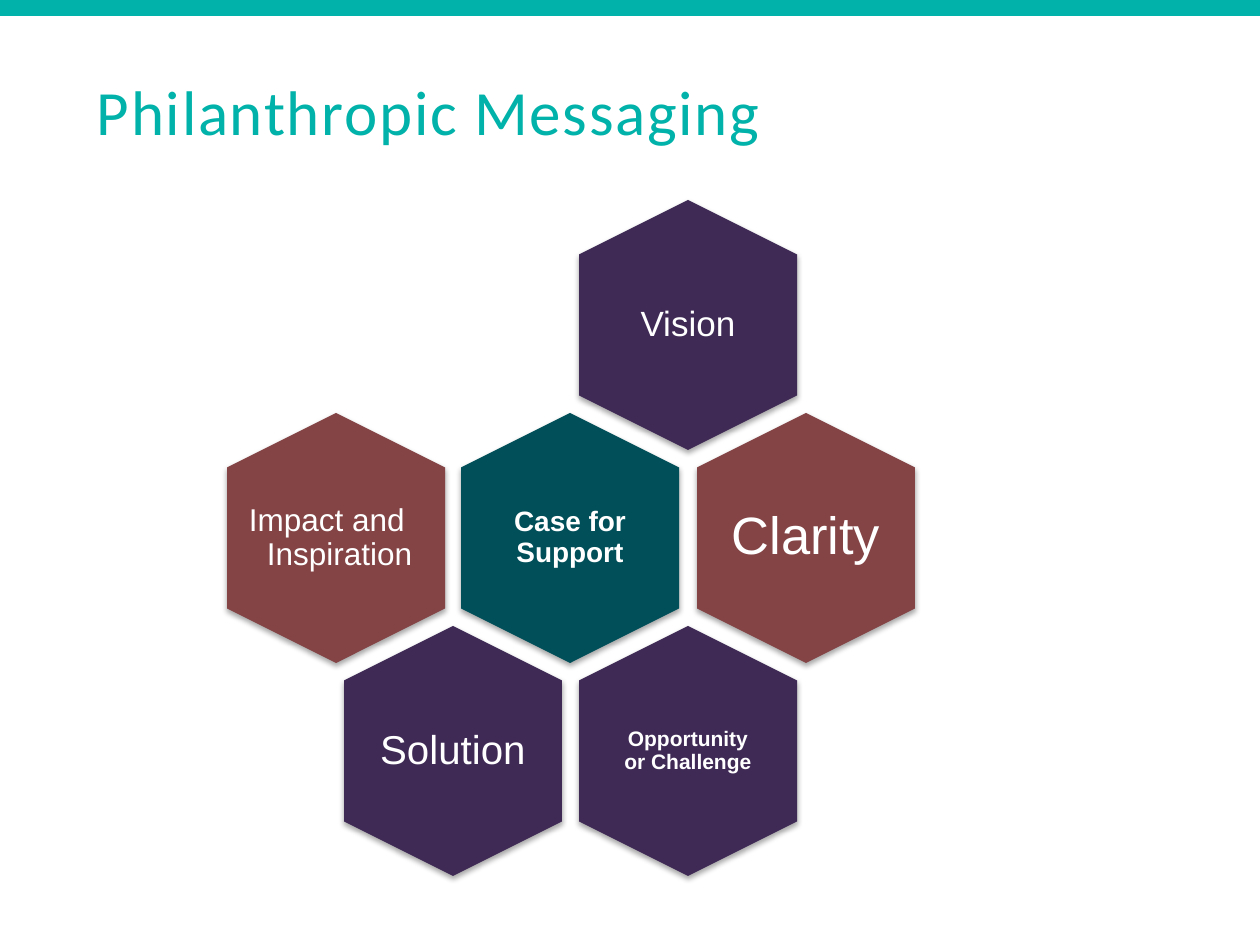
import lxml.etree
import pptx
import pptx.dml.color
import pptx.enum.shapes
import pptx.enum.text
import pptx.oxml.ns
import pptx.util

EMU_PER_PX = 914400 / 126
COLORS = {
    "teal": "00B2A9",
    "deep teal": "004F59",
    "purple": "3F2A56",
    "red": "844345",
    "white": "FFFFFF",
    "shadow": "000000",
}
HEX_LENGTH, HEX_BREADTH = 250, 218
LABEL_WIDTH, LABEL_HEIGHT = 150, 172
COLUMN_CENTERS = [336, 453, 570, 688, 806]
FIRST_ROW_CENTER, ROW_STEP = 325, 213

# text, column, row, fill, font size, bold, inset
CELLS = [
    ("Vision", 3, 0, "purple", 20, False, 10),
    ("Case for Support", 2, 1, "deep teal", 16, True, 9),
    ("Clarity", 4, 1, "red", 30, False, 0),
    ("Opportunity or Challenge", 3, 2, "purple", 12, True, 6),
    ("Solution", 1, 2, "purple", 23, False, 0),
]


def px(length):
    return pptx.util.Emu(round(length * EMU_PER_PX))


def color(name):
    return pptx.dml.color.RGBColor.from_string(COLORS[name])


def add_filled_shape(page, kind, left, top, width, height, fill):
    shape = page.shapes.add_shape(kind, px(left), px(top), px(width), px(height))
    shape.shadow.inherit = False
    shape.fill.solid()
    shape.fill.fore_color.rgb = color(fill)
    shape.line.fill.background()
    return shape


def add_soft_shadow(shape):
    """Put a blurred shadow straight below the shape."""
    qn = pptx.oxml.ns.qn
    effects = shape._element.spPr.find(qn("a:effectLst"))
    shadow = lxml.etree.SubElement(
        effects, qn("a:outerShdw"), blurRad="40000", dist="23000",
        dir="5400000", rotWithShape="0")
    tint = lxml.etree.SubElement(shadow, qn("a:srgbClr"), val=COLORS["shadow"])
    lxml.etree.SubElement(tint, qn("a:alpha"), val="35000")


def add_hexagon(page, center_x, center_y, fill):
    """Add a hexagon standing on its point."""
    hexagon = add_filled_shape(
        page, pptx.enum.shapes.MSO_SHAPE.HEXAGON,
        center_x - HEX_LENGTH / 2, center_y - HEX_BREADTH / 2,
        HEX_LENGTH, HEX_BREADTH, fill)
    hexagon.adjustments[0] = 0.25
    hexagon.rotation = 90
    add_soft_shadow(hexagon)


def add_text(page, text, left, top, width, height, size, font, tint, inset=0):
    """Add a one-paragraph text box and return its frame and paragraph."""
    box = page.shapes.add_textbox(px(left), px(top), px(width), px(height))
    frame = box.text_frame
    frame.word_wrap = True
    frame.margin_left = frame.margin_right = px(inset)
    frame.margin_top = frame.margin_bottom = px(inset)
    para = frame.paragraphs[0]
    para.text = text
    para.font.size = pptx.util.Pt(size)
    para.font.name = font
    para.font.color.rgb = color(tint)
    return frame, para


def add_label(page, text, center_x, center_y, size, bold=False, inset=0,
              width=LABEL_WIDTH):
    frame, para = add_text(
        page, text, center_x - width / 2, center_y - LABEL_HEIGHT / 2,
        width, LABEL_HEIGHT, size, "Arial", "white", inset)
    frame.vertical_anchor = pptx.enum.text.MSO_ANCHOR.MIDDLE
    para.alignment = pptx.enum.text.PP_ALIGN.CENTER
    para.line_spacing = 0.9
    para.font.bold = bold
    return para


def add_title(page, text):
    para = add_text(page, text, 97, 73, 1071, 77, 36, "Calibri", "teal")[1]
    para.runs[0]._r.get_or_add_rPr().set("spc", "100")


def add_impact_cell(page):
    """Add the cell whose second line is stepped in by a hanging indent."""
    center_x, center_y = COLUMN_CENTERS[0], FIRST_ROW_CENTER + ROW_STEP
    add_hexagon(page, center_x, center_y, "red")
    para = add_label(page, "Impact and Inspiration", center_x + 4, center_y, 18,
                     inset=9, width=240)
    para.alignment = pptx.enum.text.PP_ALIGN.LEFT
    properties = para._p.get_or_add_pPr()
    properties.set("marL", str(px(38)))
    properties.set("indent", str(px(-18)))


def main():
    deck = pptx.Presentation()
    deck.slide_width, deck.slide_height = px(1260), px(945)
    page = deck.slides.add_slide(deck.slide_layouts[6])
    add_filled_shape(page, pptx.enum.shapes.MSO_SHAPE.RECTANGLE,
                     0, 0, 1260, 16, "teal")
    add_title(page, "Philanthropic Messaging")
    add_impact_cell(page)
    for text, column, row, fill, size, bold, inset in CELLS:
        center_x = COLUMN_CENTERS[column]
        center_y = FIRST_ROW_CENTER + row * ROW_STEP
        add_hexagon(page, center_x, center_y, fill)
        add_label(page, text, center_x, center_y, size, bold, inset)
    deck.save("out.pptx")


if __name__ == "__main__":
    main()
